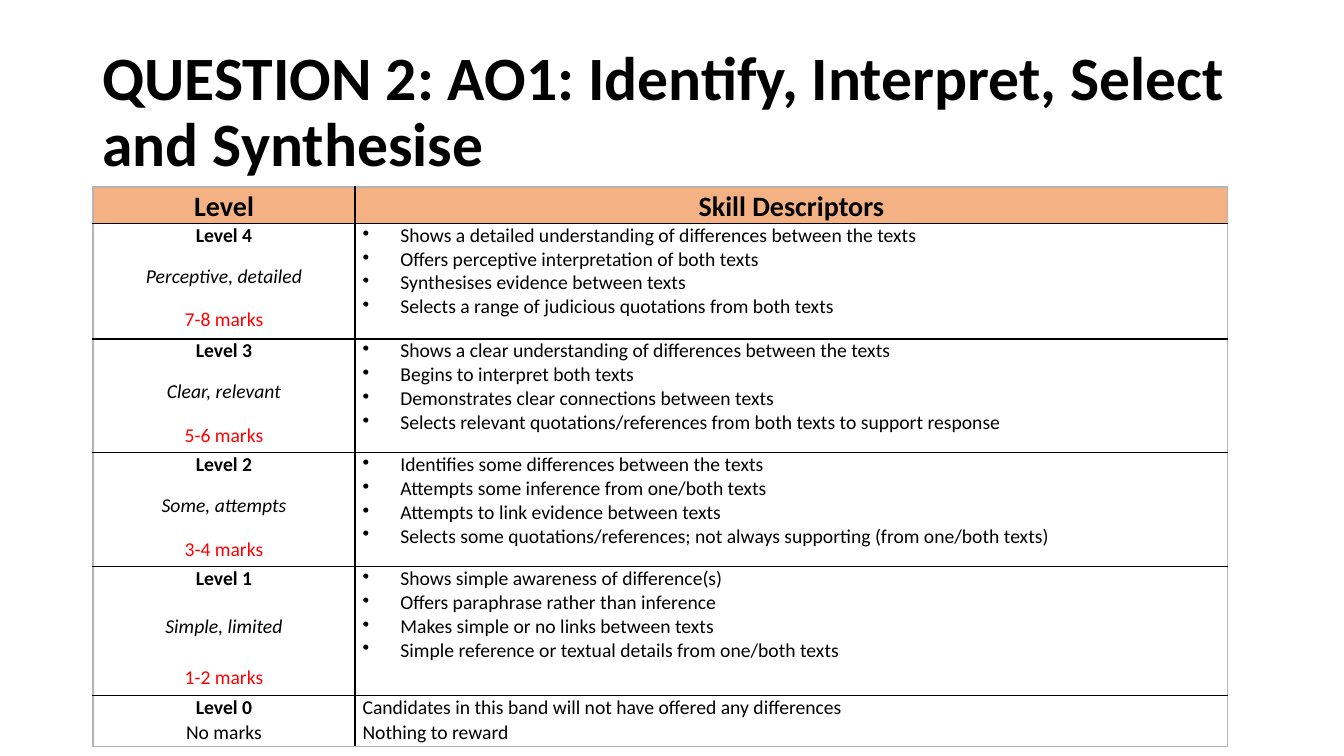
from pptx import Presentation
from pptx.dml.color import RGBColor
from pptx.enum.text import MSO_ANCHOR, MSO_AUTO_SIZE, PP_ALIGN
from pptx.oxml import parse_xml
from pptx.oxml.ns import nsdecls
from pptx.util import Pt

LEFT, MID = PP_ALIGN.LEFT, PP_ALIGN.CENTER
CENTRE, TOP = MSO_ANCHOR.MIDDLE, MSO_ANCHOR.TOP
FIXED = MSO_AUTO_SIZE.NONE

BLACK = RGBColor(0x00, 0x00, 0x00)
WHITE = RGBColor(0xFF, 0xFF, 0xFF)
RED = RGBColor(0xFF, 0x00, 0x00)
PEACH = RGBColor(0xF4, 0xB1, 0x83)
GREY = RGBColor(0xB4, 0xB4, 0xB4)

TITLE = "QUESTION 2: AO1: Identify, Interpret, Select and Synthesise"
HEADS = ("Level", "Skill Descriptors")
# level, mood, marks, gap above mood, gap above marks, skills
BANDS = [
    ("Level 4", "Perceptive, detailed", "7-8 marks", 12.2, 13, [
        "Shows a detailed understanding of differences between the texts",
        "Offers perceptive interpretation of both texts",
        "Synthesises evidence between texts",
        "Selects a range of judicious quotations from both texts"]),
    ("Level 3", "Clear, relevant", "5-6 marks", 12.2, 13, [
        "Shows a clear understanding of differences between the texts",
        "Begins to interpret both texts",
        "Demonstrates clear connections between texts",
        "Selects relevant quotations/references from both texts to support response"]),
    ("Level 2", "Some, attempts", "3-4 marks", 12.2, 13, [
        "Identifies some differences between the texts",
        "Attempts some inference from one/both texts",
        "Attempts to link evidence between texts",
        "Selects some quotations/references; not always supporting (from one/both texts)"]),
    ("Level 1", "Simple, limited", "1-2 marks", 17.1, 18.3, [
        "Shows simple awareness of difference(s)",
        "Offers paraphrase rather than inference",
        "Makes simple or no links between texts",
        "Simple reference or textual details from one/both texts"]),
]
NONE = ("Level 0", "No marks")
NOTES = ("Candidates in this band will not have offered any differences",
         "Nothing to reward")
COLS = (187.2, 623.5)
ROWS = (26, 82.4, 81.4, 81.4, 92, 36.6)
LOOSE = 1.07


class Deck:
    face = "Calibri"

    def __init__(self, wide, high):
        self.prs = Presentation()
        self.prs.slide_width, self.prs.slide_height = Pt(wide), Pt(high)
        self.slide = self.prs.slides.add_slide(self.prs.slide_layouts[5])

    def style(self, para, size=14, color=BLACK, bold=False, italic=False):
        font = para.font
        font.name, font.size = self.face, Pt(size)
        font.bold, font.italic = bold, italic
        font.color.rgb = color

    def title(self, text, x, y, w, h):
        box = self.slide.shapes.title
        box.left, box.top, box.width, box.height = Pt(x), Pt(y), Pt(w), Pt(h)
        frame = box.text_frame
        frame.text = text
        frame.word_wrap, frame.auto_size = True, FIXED
        frame.vertical_anchor = CENTRE
        para = frame.paragraphs[0]
        para.alignment, para.line_spacing = LEFT, 0.9
        self.style(para, 44, bold=True)

    def table(self, x, y, cols, rows):
        grid = self.slide.shapes.add_table(
            len(rows), len(cols), Pt(x), Pt(y), Pt(sum(cols)), Pt(sum(rows))).table
        for col, wide in zip(grid.columns, cols):
            col.width = Pt(wide)
        for row, high in zip(grid.rows, rows):
            row.height = Pt(high)
        for r in range(len(rows)):
            for c in range(len(cols)):
                cell = grid.cell(r, c)
                cell.margin_left = cell.margin_right = Pt(5.4)
                cell.margin_top = cell.margin_bottom = 0
                cell.vertical_anchor = TOP
                cell.fill.solid()
                cell.fill.fore_color.rgb = WHITE if r else PEACH
                self.edge(cell, L=c == 0, R=c == len(cols) - 1,
                          T=r == 0, B=r == len(rows) - 1)
        return grid

    def edge(self, cell, **sides):
        """Draw the four borders; sides marked True lie on the table's rim."""
        props = cell._tc.get_or_add_tcPr()
        for spot, (side, rim) in enumerate(sides.items()):
            props.insert(spot, parse_xml(
                f'<a:ln{side} {nsdecls("a")} w="{Pt(1)}"><a:solidFill>'
                f'<a:srgbClr val="{GREY if rim else BLACK}"/>'
                f'</a:solidFill></a:ln{side}>'))

    def line(self, cell, text, align=LEFT, gap=0, lead=1.0, dot=False, **look):
        """Add a paragraph to a cell, using its first one if still empty."""
        frame = cell.text_frame
        para = frame.add_paragraph() if frame.text else frame.paragraphs[0]
        para.text = text
        para.alignment, para.line_spacing = align, lead
        para.space_before = Pt(gap)
        if dot:
            props = para._p.get_or_add_pPr()
            props.set("marL", str(Pt(27)))
            props.set("indent", str(-Pt(27)))
            props.append(parse_xml(f'<a:buChar {nsdecls("a")} char="•"/>'))
        self.style(para, **look)


def main():
    deck = Deck(960, 540)
    deck.title(TITLE, 66, 28.75, 828, 104.4)
    grid = deck.table(66.4, 133.5, COLS, ROWS)
    for c, head in enumerate(HEADS):
        deck.line(grid.cell(0, c), head, MID, lead=LOOSE, size=20, bold=True)
    for r, (level, mood, marks, near, far, skills) in enumerate(BANDS, 1):
        cell = grid.cell(r, 0)
        deck.line(cell, level, MID, bold=True)
        deck.line(cell, mood, MID, near, italic=True)
        deck.line(cell, marks, MID, far, LOOSE, color=RED)
        for skill in skills:
            deck.line(grid.cell(r, 1), skill, dot=True)
    last = len(ROWS) - 1
    for c, (pair, align) in enumerate(((NONE, MID), (NOTES, LEFT))):
        deck.line(grid.cell(last, c), pair[0], align, bold=c == 0)
        deck.line(grid.cell(last, c), pair[1], align, lead=LOOSE)
    deck.prs.save("out.pptx")


if __name__ == "__main__":
    main()
